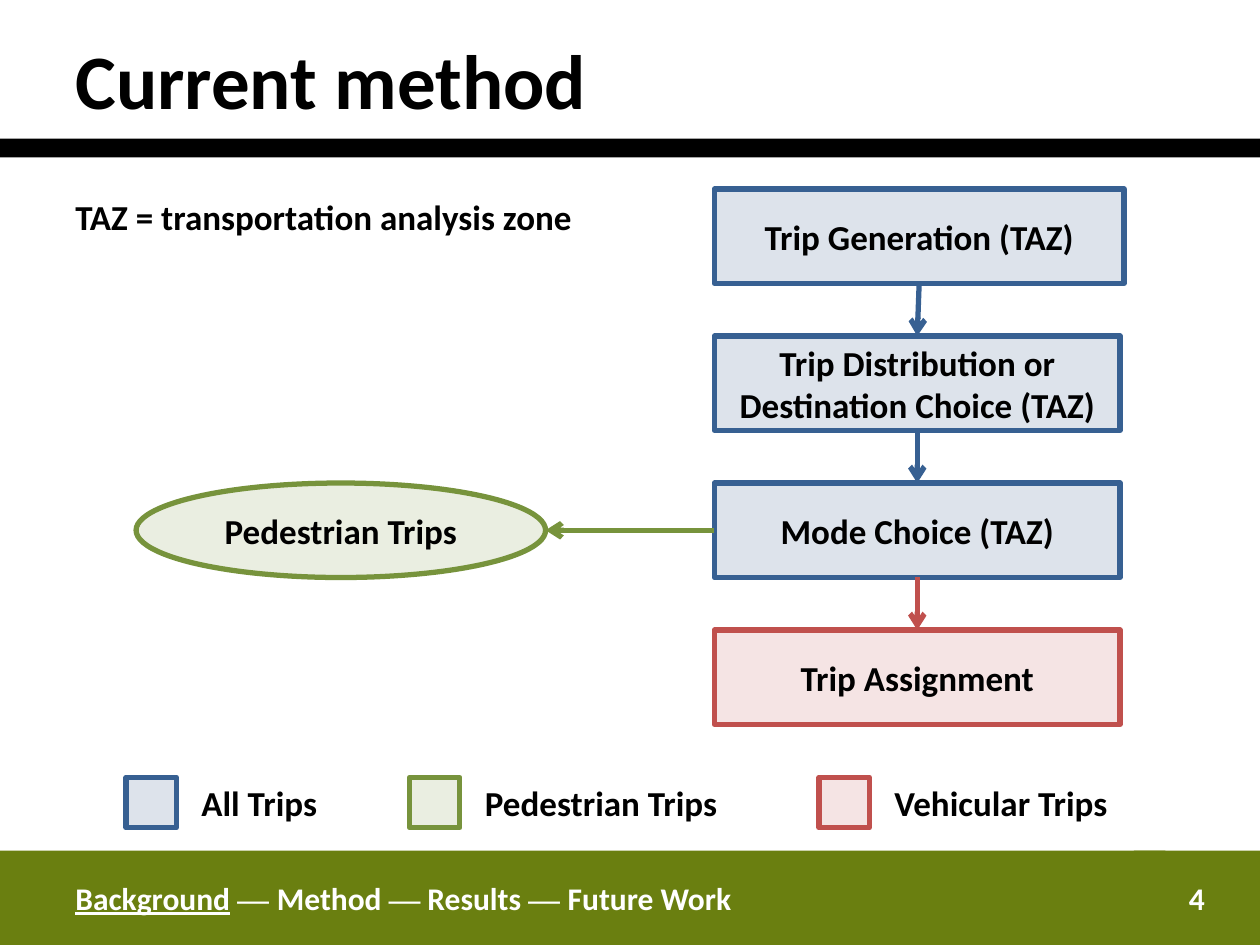
from lxml.etree import SubElement
from pptx import Presentation
from pptx.dml.color import RGBColor
from pptx.enum.shapes import MSO_CONNECTOR, MSO_SHAPE
from pptx.enum.text import MSO_ANCHOR, PP_ALIGN
from pptx.oxml.ns import qn
from pptx.util import Inches, Pt

COLORS = {
    "black": "000000",
    "white": "FFFFFF",
    "band": "6A7F10",
    "all": "1F497D",
    "all_line": "376092",
    "pedestrian": "77933C",
    "pedestrian_line": "77933C",
    "vehicular": "C0504D",
    "vehicular_line": "C0504D",
}
TINT_PERCENT = 15
TOP, LEFT, BOTTOM = 0, 1, 2

FLOW_LEFT, FLOW_TOP, FLOW_STEP = 5.67, 1.5, 7 / 6
BOX_HEIGHT = 0.75
FLOW = [
    ("Trip Generation (TAZ)", "all", 3.25),
    ("Trip Distribution or Destination Choice (TAZ)", "all", 3.22),
    ("Mode Choice (TAZ)", "all", 3.22),
    ("Trip Assignment", "vehicular", 3.22),
]
LEGEND = [
    ("All Trips", "all", 1, 1.15),
    ("Pedestrian Trips", "pedestrian", 3.25, 2.12),
    ("Vehicular Trips", "vehicular", 6.5, 1.95),
]
SERIF = "Times New Roman"
FOOTER = [
    ("Background", "Calibri", True),
    (" ", "Calibri", False),
    ("— ", SERIF, False),
    ("Method ", "Calibri", False),
    ("—", SERIF, False),
    (" Results ", "Calibri", False),
    ("— ", SERIF, False),
    ("Future Work", "Calibri", False),
]


def rgb(name):
    return RGBColor.from_string(COLORS[name])


def add_span(para, text, size=20, color="black", font="Calibri", underline=False):
    span = para.add_run()
    span.text = text
    span.font.size = Pt(size)
    span.font.name = font
    span.font.bold = True
    span.font.underline = underline
    span.font.color.rgb = rgb(color)


def write(shape, text, align=PP_ALIGN.CENTER, anchor=MSO_ANCHOR.MIDDLE, wrap=True, **style):
    """Set the text of a shape; text is a string or (text, font, underline) spans."""
    frame = shape.text_frame
    frame.word_wrap = wrap
    frame.vertical_anchor = anchor
    para = frame.paragraphs[0]
    para.alignment = align
    if isinstance(text, str):
        add_span(para, text, **style)
        return
    for words, font, underline in text:
        add_span(para, words, font=font, underline=underline, **style)


def add_block(page, left, top, width, height, color, kind=MSO_SHAPE.RECTANGLE):
    block = page.shapes.add_shape(
        kind, Inches(left), Inches(top), Inches(width), Inches(height))
    block.shadow.inherit = False
    block.fill.solid()
    block.fill.fore_color.rgb = rgb(color)
    block.line.fill.background()
    return block


def add_tinted(page, left, top, width, height, group, kind=MSO_SHAPE.RECTANGLE):
    """Add an outlined block with a nearly transparent fill in its trip group's colour."""
    block = add_block(page, left, top, width, height, group, kind)
    color = block.fill._xPr.find(qn("a:solidFill"))[0]
    SubElement(color, qn("a:alpha"), val=str(TINT_PERCENT * 1000))
    block.line.color.rgb = rgb(group + "_line")
    block.line.width = Pt(3)
    return block


def add_label(page, text, left, top, width, height, **style):
    label = page.shapes.add_textbox(
        Inches(left), Inches(top), Inches(width), Inches(height))
    write(label, text, align=PP_ALIGN.LEFT, **style)


def add_arrow(page, start, start_side, group, end=None, end_side=TOP, end_point=(0, 0)):
    """Join the side of a box to another box, or to a point in slide units."""
    arrow = page.shapes.add_connector(MSO_CONNECTOR.STRAIGHT, 0, 0, *end_point)
    arrow.begin_connect(start, start_side)
    if end is not None:
        arrow.end_connect(end, end_side)
    arrow.line.color.rgb = rgb(group + "_line")
    arrow.line.width = Pt(3)
    SubElement(arrow.line._get_or_add_ln(), qn("a:tailEnd"), type="arrow")
    SubElement(arrow._element.spPr, qn("a:effectLst"))


def add_flow(page):
    boxes = []
    for row, (text, group, width) in enumerate(FLOW):
        box = add_tinted(page, FLOW_LEFT, FLOW_TOP + row * FLOW_STEP,
                         width, BOX_HEIGHT, group)
        write(box, text)
        if boxes:
            add_arrow(page, boxes[-1], BOTTOM, group, end=box)
        boxes.append(box)

    mode_choice = boxes[2]
    ellipse = add_tinted(page, 1.08, FLOW_TOP + 2 * FLOW_STEP, 3.25, BOX_HEIGHT,
                         "pedestrian", MSO_SHAPE.OVAL)
    write(ellipse, "Pedestrian Trips")
    ellipse_right = (ellipse.left + ellipse.width, ellipse.top + ellipse.height // 2)
    add_arrow(page, mode_choice, LEFT, "pedestrian", end_point=ellipse_right)


def add_legend(page):
    for text, group, left, width in LEGEND:
        add_tinted(page, left, 6.17, 0.4, 0.4, group)
        add_label(page, text, left + 0.5, 6.15, width, 0.44, wrap=False)


def add_footer(page):
    add_block(page, 0, 6.75, 0.5, 0.75, "band")
    number = add_block(page, 9, 6.75, 1, 0.75, "band")
    write(number, "4", size=18, color="white")
    outline = add_block(page, 0.5, 6.75, 8.75, 0.75, "band")
    write(outline, FOOTER, align=PP_ALIGN.LEFT, size=18, color="white")


def main():
    deck = Presentation()
    deck.slide_width = Inches(10)
    deck.slide_height = Inches(7.5)
    page = deck.slides.add_slide(deck.slide_layouts[6])

    add_block(page, 0, 1.1, 10, 0.15, "black")
    add_label(page, "Current method", 0.5, 0, 6.5, 1.25, size=44)
    add_label(page, "TAZ = transportation analysis zone", 0.5, 1.5, 4.4, 0.44,
              anchor=MSO_ANCHOR.TOP, wrap=False)
    add_flow(page)
    add_legend(page)
    add_footer(page)

    deck.save("out.pptx")


if __name__ == "__main__":
    main()
